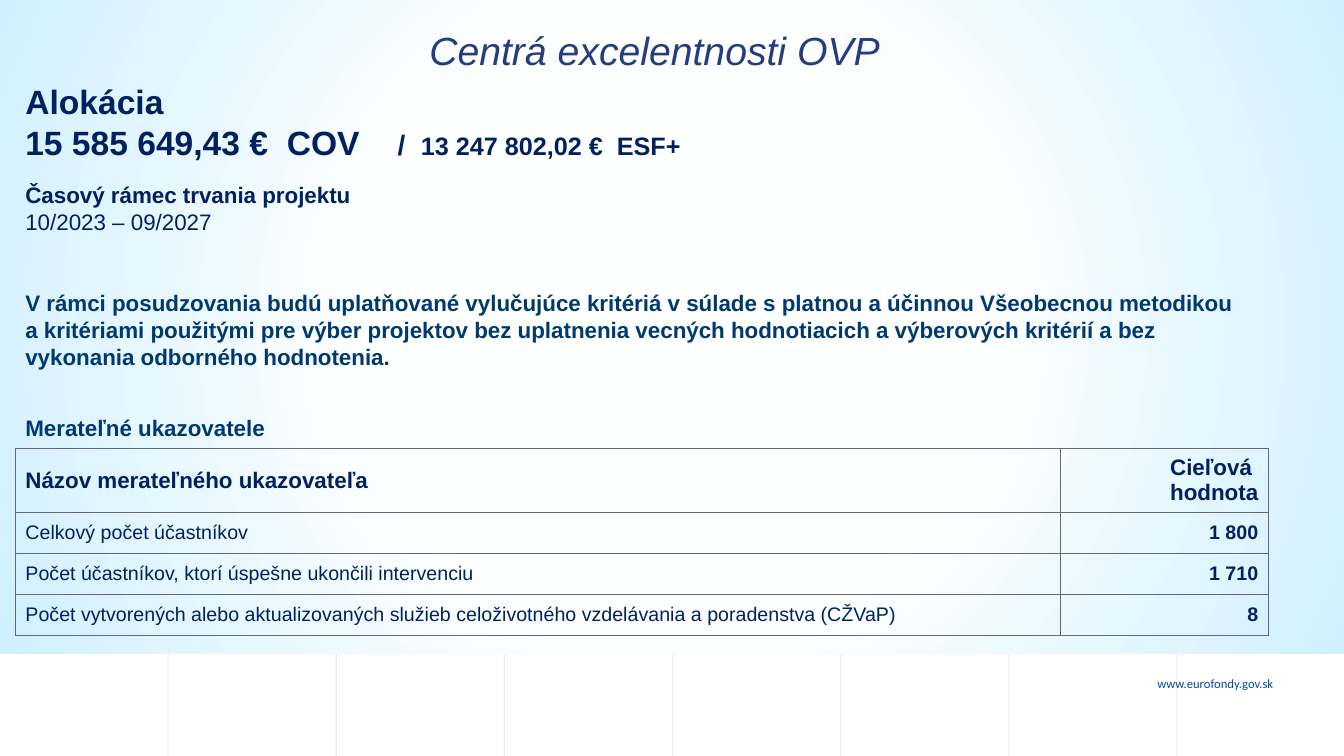
from lxml import etree
from pptx import Presentation
from pptx.dml.color import RGBColor
from pptx.enum.shapes import MSO_CONNECTOR, MSO_SHAPE
from pptx.enum.text import MSO_ANCHOR, PP_ALIGN
from pptx.oxml import parse_xml
from pptx.oxml.ns import qn
from pptx.util import Pt

LINE = MSO_CONNECTOR.STRAIGHT
RECT = MSO_SHAPE.RECTANGLE
MIDDLE = MSO_ANCHOR.MIDDLE
LEFT, CENTER, RIGHT = PP_ALIGN.LEFT, PP_ALIGN.CENTER, PP_ALIGN.RIGHT

NAVY = RGBColor(0x00, 0x20, 0x60)
BLUE = RGBColor(0x00, 0x39, 0x70)
INDIGO = RGBColor(0x26, 0x3C, 0x80)
LINK = RGBColor(0x00, 0x4C, 0x96)
GREY = RGBColor(0x66, 0x6A, 0x6D)
PALE = RGBColor(0xFE, 0xFF, 0xFF)
SKY = RGBColor(0xD0, 0xF0, 0xFF)
SPACE = 'xmlns:a="http://schemas.openxmlformats.org/drawingml/2006/main"'


def style(para, size, color, bold=False, align=LEFT, name="Arial"):
    para.alignment = align
    font = para.font
    font.name, font.size, font.bold = name, Pt(size), bold
    font.color.rgb = color


def add_box(left, top, width, height):
    box = slide.shapes.add_textbox(Pt(left), Pt(top), Pt(width), Pt(height))
    box.text_frame.word_wrap = True
    return box.text_frame


deck = Presentation()
deck.slide_width, deck.slide_height = Pt(960), Pt(540)
slide = deck.slides.add_slide(deck.slide_layouts[6])

# Faint vertical grid
for i in range(1, 8):
    x = Pt(120.1 * i)
    line = slide.shapes.add_connector(LINE, x, 0, x, Pt(540))
    line.line.width = Pt(0.75)
    line.line.color.rgb = LINK
    props = line._element.spPr
    color = props.find(".//" + qn("a:srgbClr"))
    etree.SubElement(color, qn("a:alpha"), val="10000")
    etree.SubElement(props, qn("a:effectLst"))

site = add_box(772.5, 479.5, 144, 18).paragraphs[0]
site.text = "www.eurofondy.gov.sk"
style(site, 9, LINK, align=RIGHT, name="Calibri")

# Panel with a round gradient
panel = slide.shapes.add_shape(RECT, 0, Pt(-1), Pt(961), Pt(468))
panel.shadow.inherit = False
panel.line.fill.background()
stops = "".join(
    f'<a:gs pos="{pos}000"><a:srgbClr val="{color}"/></a:gs>'
    for pos, color in ((0, PALE), (40, PALE), (100, SKY)))
panel._element.spPr.find(qn("a:prstGeom")).addnext(parse_xml(
    f'<a:gradFill {SPACE} rotWithShape="1"><a:gsLst>{stops}</a:gsLst>'
    '<a:path path="circle"><a:fillToRect l="50000" t="50000" r="50000" '
    'b="50000"/></a:path></a:gradFill>'))

title = add_box(24.5, 15, 886, 41).paragraphs[0]
title.text = "Centrá excelentnosti OVP"
style(title, 28, INDIGO, align=CENTER)
title.font.italic = True

# Body: text, size, colour, bold, space before
BODY = (
    ("Alokácia", 24, NAVY, True, 0),
    ("", 24, NAVY, True, 0),
    ("Časový rámec trvania projektu", 16, NAVY, True, 14),
    ("10/2023 – 09/2027", 16, NAVY, False, 0),
    ("V rámci posudzovania budú uplatňované vylučujúce kritériá v súlade "
     "s platnou a účinnou Všeobecnou metodikou a kritériami použitými pre "
     "výber projektov bez uplatnenia vecných hodnotiacich a výberových "
     "kritérií a bez vykonania odborného hodnotenia.", 16, BLUE, True, 38.5),
    ("Merateľné ukazovatele", 16, BLUE, True, 32),
)
SUMS = (("15 585 649,43 €  COV\t", 24), ("/\t", 20),
        ("13 247 802,02 €  ESF+", 18))
body = add_box(11, 54.5, 882, 268)
for i, (text, size, color, bold, gap) in enumerate(BODY):
    para = body.add_paragraph() if i else body.paragraphs[0]
    if gap:
        para.space_before = Pt(gap)
    if text:
        para.text = text
    else:
        tabs = etree.SubElement(para._p.get_or_add_pPr(), qn("a:tabLst"))
        for stop in (266, 282.5):
            etree.SubElement(tabs, qn("a:tab"), pos=str(Pt(stop)), algn="l")
        for part, height in SUMS:
            run = para.add_run()
            run.text = part
            run.font.size = Pt(height)
    style(para, size, color, bold)

# Indicator table
ROWS = (
    ("Názov merateľného ukazovateľa", "Cieľová \nhodnota"),
    ("Celkový počet účastníkov", "1 800"),
    ("Počet účastníkov, ktorí úspešne ukončili intervenciu", "1 710"),
    ("Počet vytvorených alebo aktualizovaných služieb celoživotného "
     "vzdelávania a poradenstva (CŽVaP)", "8"),
)
frame = slide.shapes.add_table(4, 2, Pt(11), Pt(320.5), Pt(895), Pt(133.6))
table = frame.table
table.first_row = table.horz_banding = False
table.columns[0].width, table.columns[1].width = Pt(746.5), Pt(148.5)
for r, texts in enumerate(ROWS):
    table.rows[r].height = Pt(29.3 if r else 45.7)
    for c, text in enumerate(texts):
        cell = table.cell(r, c)
        cell.text = text
        cell.vertical_anchor = MIDDLE
        for para in cell.text_frame.paragraphs:
            style(para, 14 if r else 16, NAVY, r == 0 or c == 1,
                  RIGHT if c else LEFT)
        props = cell._tc.get_or_add_tcPr()
        for side in ("lnL", "lnR", "lnT", "lnB"):
            props.append(parse_xml(
                f'<a:{side} {SPACE} w="12700"><a:solidFill>'
                f'<a:srgbClr val="{GREY}"/></a:solidFill></a:{side}>'))
        cell.fill.background()

deck.save("out.pptx")
